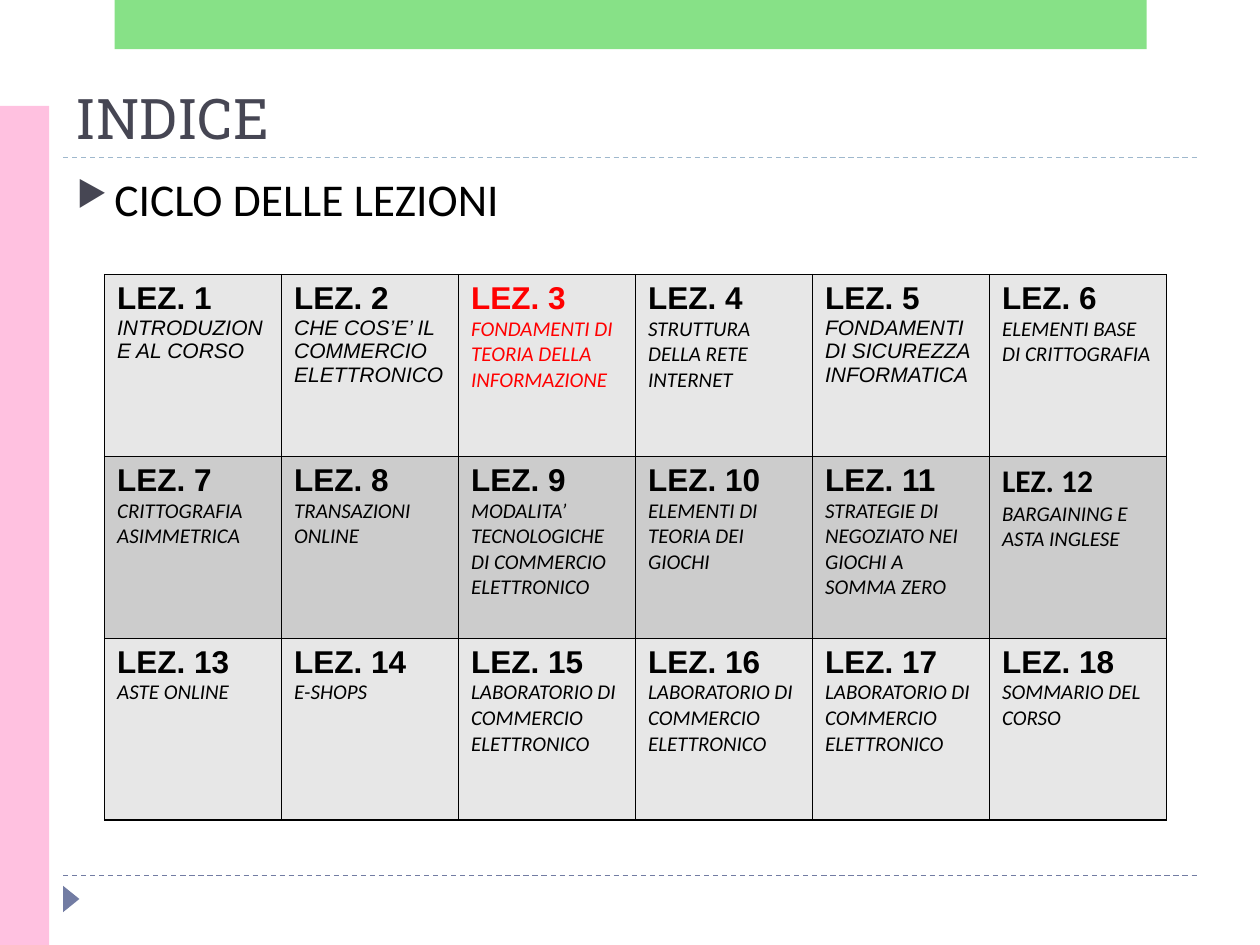
from lxml import etree
from pptx import Presentation
from pptx.dml.color import RGBColor
from pptx.enum.dml import MSO_LINE
from pptx.enum.shapes import MSO_CONNECTOR, MSO_SHAPE
from pptx.enum.text import MSO_ANCHOR, MSO_AUTO_SIZE, PP_ALIGN
from pptx.oxml.ns import qn
from pptx.util import Inches, Pt

STRAIGHT = MSO_CONNECTOR.STRAIGHT
RECTANGLE = MSO_SHAPE.RECTANGLE
TRIANGLE = MSO_SHAPE.ISOSCELES_TRIANGLE
DASH = MSO_LINE.DASH
BOTTOM = MSO_ANCHOR.BOTTOM
LEFT = PP_ALIGN.LEFT
NO_AUTOFIT = MSO_AUTO_SIZE.NONE

COLORS = {
    "white": "FFFFFF", "black": "000000", "red": "FF0000",
    "title": "464653", "slate": "727CA3", "sky": "9FB8CD",
    "pink": "FFC1E0", "green": "62D862",
    "light": "E7E7E7", "dark": "CCCCCC",
}


def add_run(paragraph, text, color, **formats):
    run = paragraph.add_run()
    run.text = text
    run.font.color.rgb = RGBColor.from_string(COLORS[color])
    for name, value in formats.items():
        setattr(run.font, name, value)


def add_element(parent, tag, **attributes):
    return etree.SubElement(parent, qn(tag), attributes)


presentation = Presentation()
presentation.slide_width = Inches(10)
presentation.slide_height = Inches(7.5)
slide = presentation.slides.add_slide(presentation.slide_layouts[5])
slide.background.fill.solid()
slide.background.fill.fore_color.rgb = RGBColor.from_string(COLORS["white"])

for y, color in [(6.95, "slate"), (1.25, "sky")]:
    rule = slide.shapes.add_connector(
        STRAIGHT, Inches(0.5), Inches(y), Inches(9.5), Inches(y))
    rule.line.color.rgb = RGBColor.from_string(COLORS[color])
    rule.line.width = Pt(0.75)
    rule.line.dash_style = DASH
    add_element(rule.element.spPr, "a:effectLst")

decorations = [
    (TRIANGLE, (0.46, 7.07, 0.21, 0.13), 90, "slate", None),
    (RECTANGLE, (0, 0.84, 0.39, 6.66), 0, "pink", None),
    (RECTANGLE, (0.91, 0, 8.19, 0.39), 0, "green", "76000"),
]
for kind, place, rotation, color, alpha in decorations:
    shape = slide.shapes.add_shape(kind, *map(Inches, place))
    shape.rotation = rotation
    shape.shadow.inherit = False
    shape.fill.solid()
    shape.fill.fore_color.rgb = RGBColor.from_string(COLORS[color])
    shape.line.fill.background()
    if alpha:
        fill_color = shape.element.spPr.find(qn("a:solidFill"))[0]
        add_element(fill_color, "a:alpha", val=alpha)

title = slide.shapes.title
title.left, title.top = Inches(0.5), Inches(0.55)
title.width, title.height = Inches(9), Inches(0.7)
title.text_frame.vertical_anchor = BOTTOM
title.text_frame.auto_size = NO_AUTOFIT
title_paragraph = title.text_frame.paragraphs[0]
title_paragraph.alignment = LEFT
add_run(title_paragraph, "INDICE", "title", size=Pt(32), name="Roboto Slab")

subtitle = slide.shapes.add_textbox(
    Inches(0.51), Inches(1.31), Inches(9), Inches(0.79))
subtitle.text_frame.word_wrap = True
subtitle_paragraph = subtitle.text_frame.paragraphs[0]
properties = subtitle_paragraph._p.get_or_add_pPr()
properties.set("marL", str(Inches(0.3)))
properties.set("indent", str(Inches(-0.3)))
bullet_color = add_element(properties, "a:buClr")
add_element(bullet_color, "a:srgbClr", val=COLORS["title"])
add_element(properties, "a:buSzPct", val="76000")
add_element(properties, "a:buChar", char="▶")
add_run(subtitle_paragraph, "CICLO DELLE LEZIONI", "black", size=Pt(26), name="Calibri")

LESSONS = [
    "INTRODUZIONE AL CORSO",
    "CHE COS’E’ IL COMMERCIO ELETTRONICO",
    "FONDAMENTI DI TEORIA DELLA INFORMAZIONE",
    "STRUTTURA DELLA RETE INTERNET",
    "FONDAMENTI DI SICUREZZA INFORMATICA",
    "ELEMENTI BASE DI CRITTOGRAFIA",
    "CRITTOGRAFIA ASIMMETRICA",
    "TRANSAZIONI ONLINE",
    "MODALITA’ TECNOLOGICHE DI COMMERCIO ELETTRONICO",
    "ELEMENTI DI TEORIA DEI GIOCHI",
    "STRATEGIE DI NEGOZIATO NEI GIOCHI A SOMMA ZERO",
    "BARGAINING E ASTA INGLESE",
    "ASTE ONLINE",
    "E-SHOPS",
    *["LABORATORIO DI COMMERCIO ELETTRONICO"] * 3,
    "SOMMARIO DEL CORSO",
]
COLUMNS, ROWS = 6, 3
CURRENT_LESSON = 3
ARIAL_TOPICS = {1, 2, 5}
CALIBRI_HEADINGS = {12}

table = slide.shapes.add_table(
    ROWS, COLUMNS, Inches(0.83), Inches(2.18), Inches(8.43), Inches(4.33)).table
table.first_row = False
table.horz_banding = False

for number, topic in enumerate(LESSONS, start=1):
    row, column = divmod(number - 1, COLUMNS)
    cell = table.cell(row, column)
    color = "red" if number == CURRENT_LESSON else "black"
    heading_font = "Calibri" if number in CALIBRI_HEADINGS else "Arial"
    topic_font = "Arial" if number in ARIAL_TOPICS else "Calibri"
    add_run(cell.text_frame.paragraphs[0], f"LEZ. {number}", color,
            size=Pt(18), name=heading_font, bold=True)
    add_run(cell.text_frame.add_paragraph(), topic, color,
            size=Pt(12), name=topic_font, bold=False, italic=True)

    cell_properties = cell._tc.get_or_add_tcPr()
    for side in ("a:lnL", "a:lnR", "a:lnT", "a:lnB"):
        border = add_element(cell_properties, side, w=str(Pt(1)))
        border_fill = add_element(border, "a:solidFill")
        add_element(border_fill, "a:srgbClr", val=COLORS["black"])
    cell.fill.solid()
    cell.fill.fore_color.rgb = RGBColor.from_string(
        COLORS["dark" if row % 2 else "light"])

presentation.save("out.pptx")
